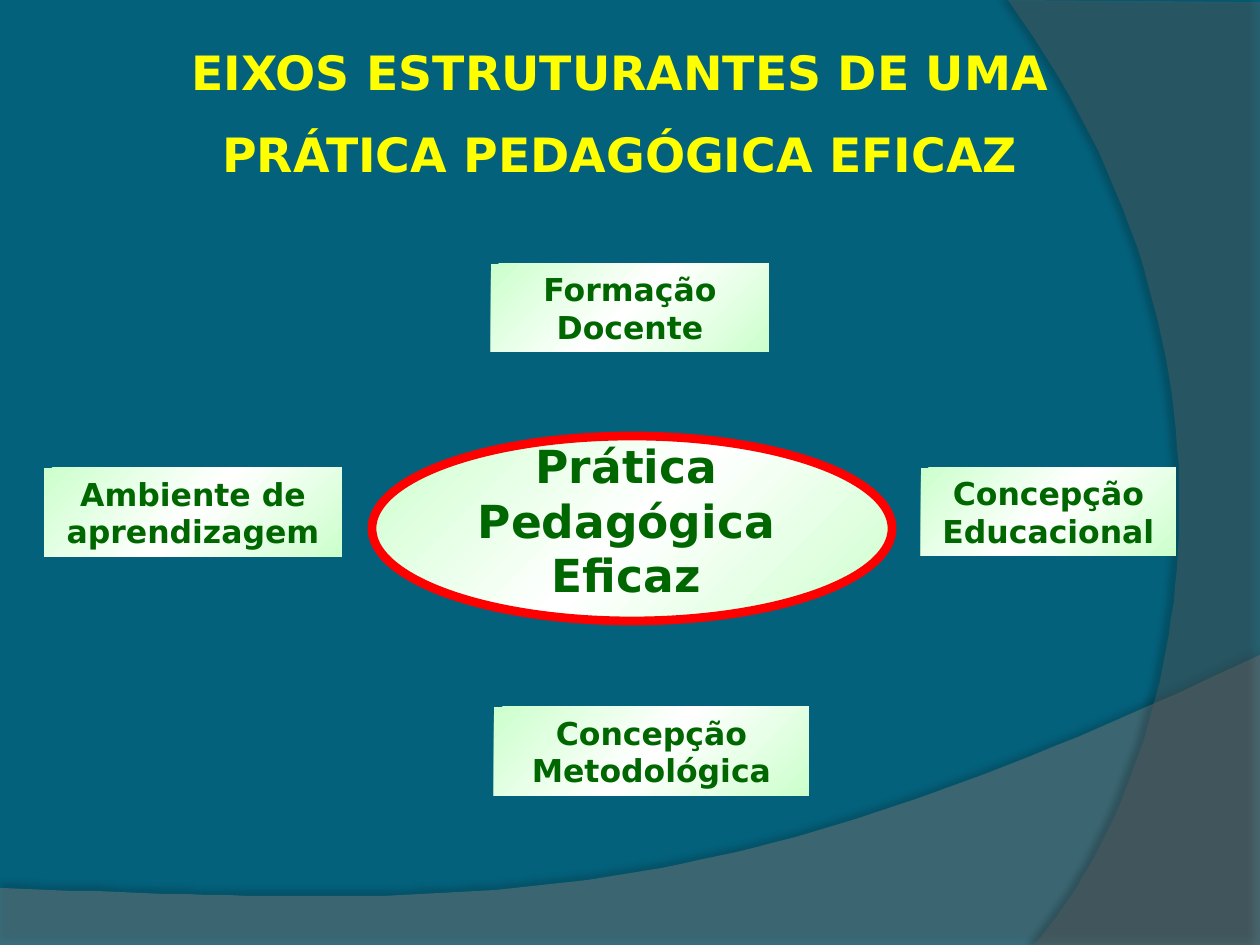
from copy import deepcopy

from lxml import etree
from pptx import Presentation
from pptx.dml.color import RGBColor
from pptx.enum.shapes import MSO_SHAPE
from pptx.enum.text import MSO_ANCHOR, MSO_AUTO_SIZE, PP_ALIGN
from pptx.oxml.ns import qn
from pptx.util import Emu, Pt

PX = 914400 / 126
RECTANGLE, ELLIPSE = MSO_SHAPE.RECTANGLE, MSO_SHAPE.OVAL
MIDDLE, CENTER, NO_FIT = MSO_ANCHOR.MIDDLE, PP_ALIGN.CENTER, MSO_AUTO_SIZE.NONE
FONT = "DejaVu Sans"
TEAL = RGBColor(0x04, 0x61, 0x7B)
GRAY = RGBColor(0x7F, 0x7F, 0x7F)
DARK_GRAY = RGBColor(0x5E, 0x5E, 0x5E)
YELLOW = RGBColor(0xFF, 0xFF, 0x00)
RED = RGBColor(0xFF, 0x00, 0x00)
WHITE = RGBColor(0xFF, 0xFF, 0xFF)
LIGHT_GREEN = RGBColor(0xCC, 0xFF, 0xCC)
DARK_GREEN = RGBColor(0x00, 0x66, 0x00)

AXES = [
    ("Formação Docente", (491, 264, 278, 88)),
    ("Concepção Educacional", (921, 468, 255, 88)),
    ("Concepção Metodológica", (494, 707, 315, 89)),
    ("Ambiente de aprendizagem", (44, 468, 298, 89)),
]


def px(*lengths):
    return [Emu(round(length * PX)) for length in lengths]


def write_text(box, text, size=18, color=DARK_GREEN, gap=0):
    frame = box.text_frame
    frame.word_wrap = True
    frame.auto_size = NO_FIT
    frame.vertical_anchor = MIDDLE
    frame.text = text
    for index, para in enumerate(frame.paragraphs):
        para.alignment = CENTER
        para.line_spacing = 1.0
        para.space_before = Pt(gap if index else 0)
        for span in para.runs:
            span.font.name = FONT
            span.font.size = Pt(size)
            span.font.bold = True
            span.font.color.rgb = color


def curve(start, control_a, control_b, end, steps=60):
    points = []
    for step in range(1, steps + 1):
        t = step / steps
        weights = ((1 - t) ** 3, 3 * t * (1 - t) ** 2, 3 * t * t * (1 - t), t ** 3)
        points.append(tuple(
            sum(weight * value for weight, value in zip(weights, values))
            for values in zip(start, control_a, control_b, end)))
    return points


def add_wave(page, points, color, opacity, shadow_opacity, distance, direction):
    builder = page.shapes.build_freeform(*points[0], scale=PX)
    builder.add_line_segments(points[1:], close=True)
    wave = builder.convert_to_shape()
    wave.fill.solid()
    wave.fill.fore_color.rgb = color
    wave.line.fill.background()
    wave.shadow.inherit = False
    properties = wave.element.spPr
    fill_color = properties.find(qn("a:solidFill"))[0]
    etree.SubElement(fill_color, qn("a:alpha"), val=str(opacity * 1000))
    shadow = etree.SubElement(
        properties.find(qn("a:effectLst")), qn("a:outerShdw"),
        blurRad=str(Pt(4)), dist=str(Pt(distance)), dir=str(direction * 60000),
        algn="ctr", rotWithShape="0")
    shadow_color = etree.SubElement(shadow, qn("a:srgbClr"), val="000000")
    etree.SubElement(shadow_color, qn("a:alpha"), val=str(shadow_opacity * 1000))


def add_gradient_shape(page, kind, place):
    shape = page.shapes.add_shape(kind, *px(*place))
    shape.shadow.inherit = False
    shape.line.fill.background()
    shape.fill.gradient()
    shape.fill.gradient_angle = 315
    stops = shape.element.spPr.find(qn("a:gradFill")).find(qn("a:gsLst"))
    stops.append(deepcopy(stops[0]))
    colors = (LIGHT_GREEN, WHITE, LIGHT_GREEN)
    for index, (stop, color) in enumerate(zip(shape.fill.gradient_stops, colors)):
        stop.position = index / 2
        stop.color.rgb = color
    return shape


def add_title(page, text):
    title = page.shapes.title
    title.left, title.top, title.width, title.height = px(42, 35, 1155, 155)
    write_text(title, text, size=27, color=YELLOW, gap=14)
    title.element.getparent().append(title.element)


def add_center(page, text):
    ellipse = add_gradient_shape(page, ELLIPSE, (372, 436, 520, 185))
    ellipse.line.color.rgb = RED
    ellipse.line.width = Pt(5)
    box = page.shapes.add_textbox(*px(438, 432, 377, 176))
    write_text(box, text, size=26)


def main():
    deck = Presentation()
    deck.slide_width, deck.slide_height = px(1260, 945)
    page = deck.slides.add_slide(deck.slide_layouts[5])
    page.background.fill.solid()
    page.background.fill.fore_color.rgb = TEAL

    bottom = [(0, 888), (0, 946), (1260, 946), (1260, 655)]
    bottom += curve((1260, 655), (704, 919), (493, 906), (0, 888))
    add_wave(page, bottom, GRAY, 45, 35, 3.5, 270)
    side = [(1260, 2), (1260, 945), (1034, 945)]
    side += curve((1034, 945), (1178, 780), (1283, 378), (1008, 0))
    add_wave(page, side, DARK_GRAY, 40, 45, 4, 180)

    add_title(page, "EIXOS ESTRUTURANTES DE UMA\nPRÁTICA PEDAGÓGICA EFICAZ")
    add_center(page, "Prática Pedagógica Eficaz")
    for text, place in AXES:
        write_text(add_gradient_shape(page, RECTANGLE, place), text)
    deck.save("out.pptx")


if __name__ == "__main__":
    main()
